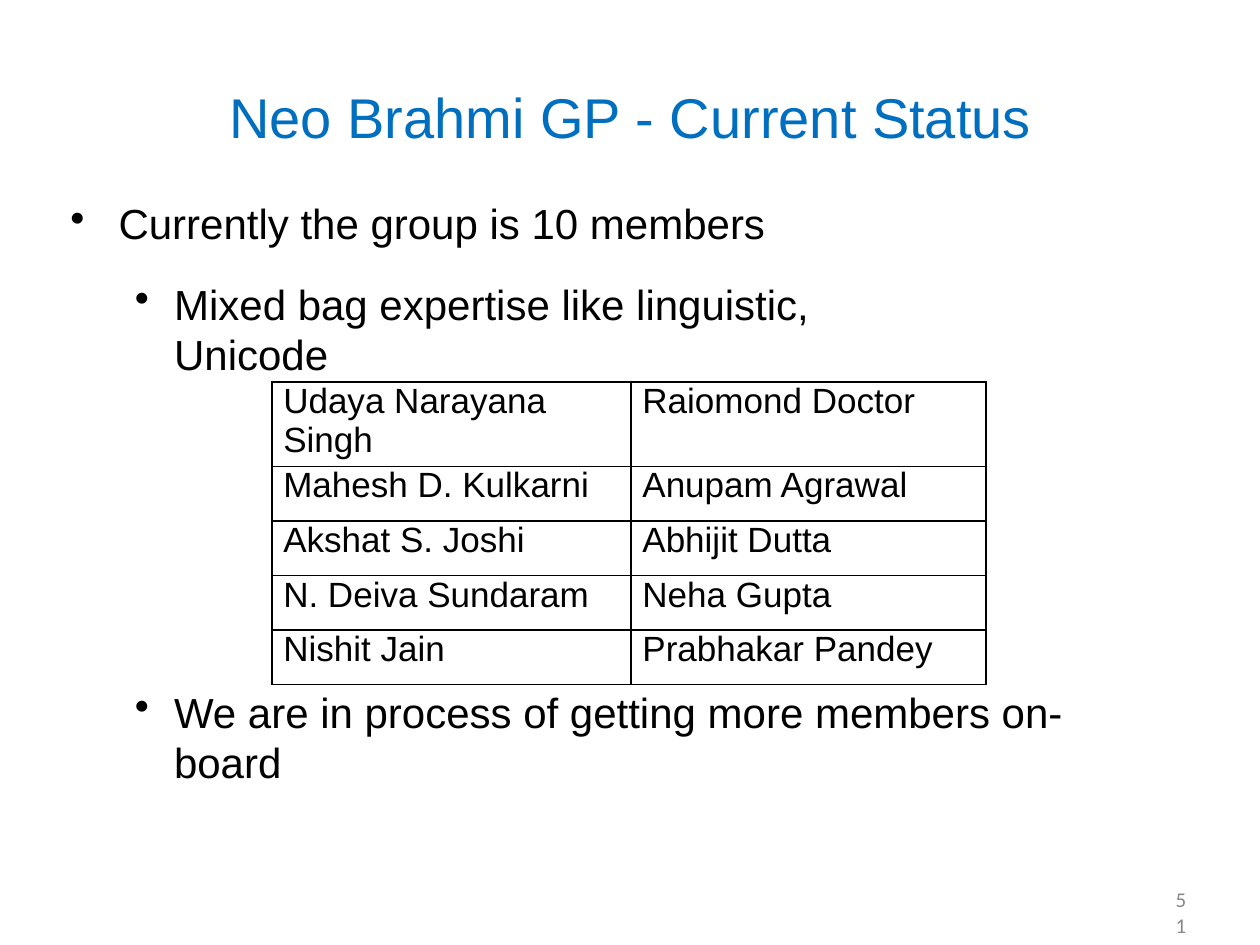
import pptx
import pptx.dml.color
import pptx.oxml
import pptx.oxml.ns
import pptx.util
from pptx.util import Cm

MEMBERS = [
    ("Udaya Narayana Singh", "Raiomond Doctor"),
    ("Mahesh D. Kulkarni", "Anupam Agrawal"),
    ("Akshat S. Joshi", "Abhijit Dutta"),
    ("N. Deiva Sundaram", "Neha Gupta"),
    ("Nishit Jain", "Prabhakar Pandey"),
]


def color(value):
    return pptx.dml.color.RGBColor.from_string(value)


def style(para, size, value="000000", name="Arial"):
    para.font.size = pptx.util.Pt(size)
    para.font.name = name
    para.font.color.rgb = color(value)


def indent(para, left, hanging=0):
    properties = para._p.get_or_add_pPr()
    properties.set("marL", str(Cm(left)))
    properties.set("indent", str(-Cm(hanging)))
    return properties


def add_frame(page, box, top_inset=0):
    frame = page.shapes.add_textbox(*map(Cm, box)).text_frame
    frame.word_wrap = True
    frame.margin_left = frame.margin_right = frame.margin_bottom = 0
    frame.margin_top = Cm(top_inset)
    return frame


def add_line(page, box, text, left, size, value, name, top_inset=0):
    para = add_frame(page, box, top_inset).paragraphs[0]
    para.text = text
    style(para, size, value, name)
    indent(para, left)


def add_bullets(page, box, items):
    frame = add_frame(page, box)
    for number, (text, left, hanging, level) in enumerate(items):
        para = frame.add_paragraph() if number else frame.paragraphs[0]
        para.text = text
        para.level = level
        para.space_before = pptx.util.Pt(17 if number else 0)
        style(para, 24)
        bullet = pptx.oxml.ns.qn("a:buChar")
        properties = indent(para, left, hanging)
        mark = properties.makeelement(bullet, {"char": "•"})
        properties.insert_element_before(mark, "a:tabLst", "a:defRPr", "a:extLst")


def add_borders(cell):
    properties = cell._tc.get_or_add_tcPr()
    for position, side in enumerate("LRTB"):
        border = pptx.oxml.parse_xml(
            f'<a:ln{side} {pptx.oxml.ns.nsdecls("a")} w="12700"><a:solidFill>'
            f'<a:srgbClr val="000000"/></a:solidFill></a:ln{side}>'
        )
        properties.insert(position, border)


def add_members(page, box):
    shape = page.shapes.add_table(len(MEMBERS), 2, *map(Cm, box))
    table = shape.table
    table.first_row = table.horz_banding = False
    for column, width in zip(table.columns, (7.24, 7.16)):
        column.width = Cm(width)
    for number, (row, names) in enumerate(zip(table.rows, MEMBERS)):
        row.height = Cm(1.1 if number else 1.7)
        for cell, name in zip(row.cells, names):
            cell.text = name
            cell.margin_left = Cm(0.23)
            cell.margin_right = cell.margin_top = cell.margin_bottom = 0
            cell.fill.background()
            add_borders(cell)
            style(cell.text_frame.paragraphs[0], 20)


def main():
    deck = pptx.Presentation()
    deck.slide_width, deck.slide_height = Cm(25.4), Cm(19.05)
    page = deck.slides.add_slide(deck.slide_layouts[6])
    add_line(page, (3.38, 0.97, 18.62, 2.69), "Neo Brahmi GP - Current Status",
             1.24, 32, "006FC0", "Arial", 0.69)
    add_line(page, (23.42, 17.88, 0.58, 0.56), "51", 0.28, 12, "888888", "Calibri")
    add_bullets(page, (1.4, 3.99, 16.89, 3.71), [
        ("Currently the group is 10 members", 0.99, 0.97, 0),
        ("Mixed bag expertise like linguistic, Unicode", 2.11, 0.79, 1),
    ])
    add_bullets(page, (2.67, 13.84, 19.25, 2.06), [
        ("We are in process of getting more members on-board", 0.84, 0.79, 0),
    ])
    add_members(page, (5.48, 7.7, 14.4, 6.1))
    deck.save("out.pptx")


if __name__ == "__main__":
    main()
